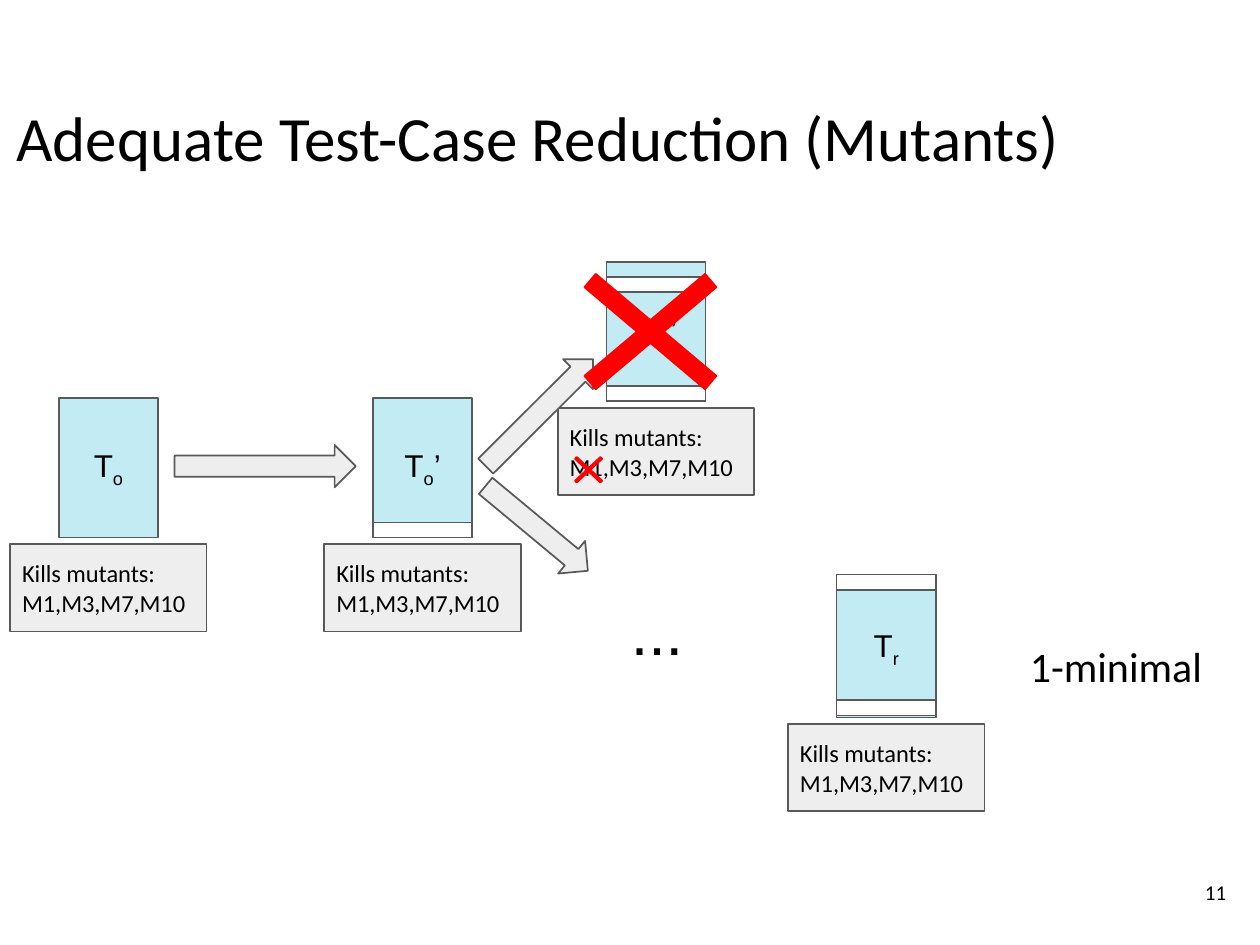
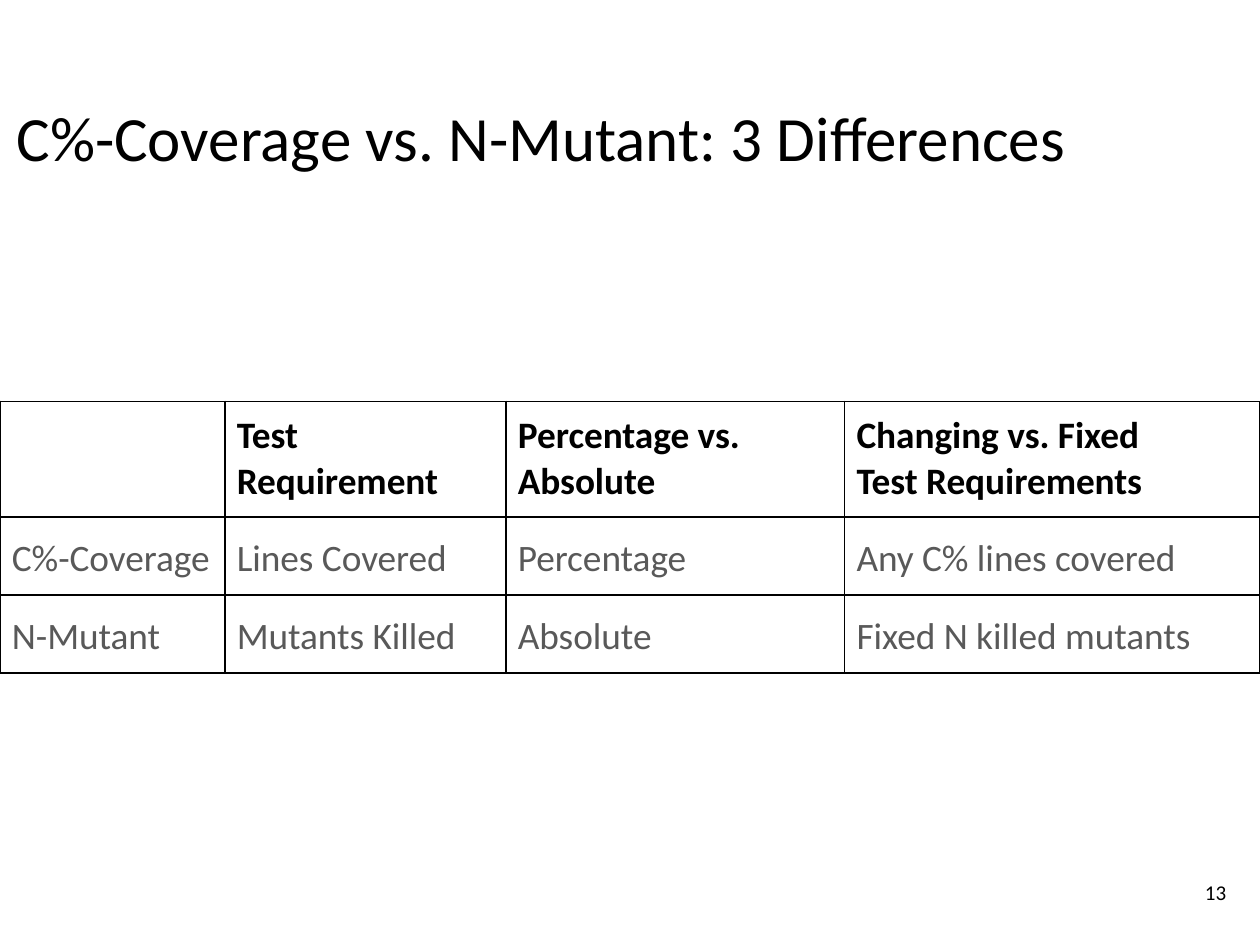
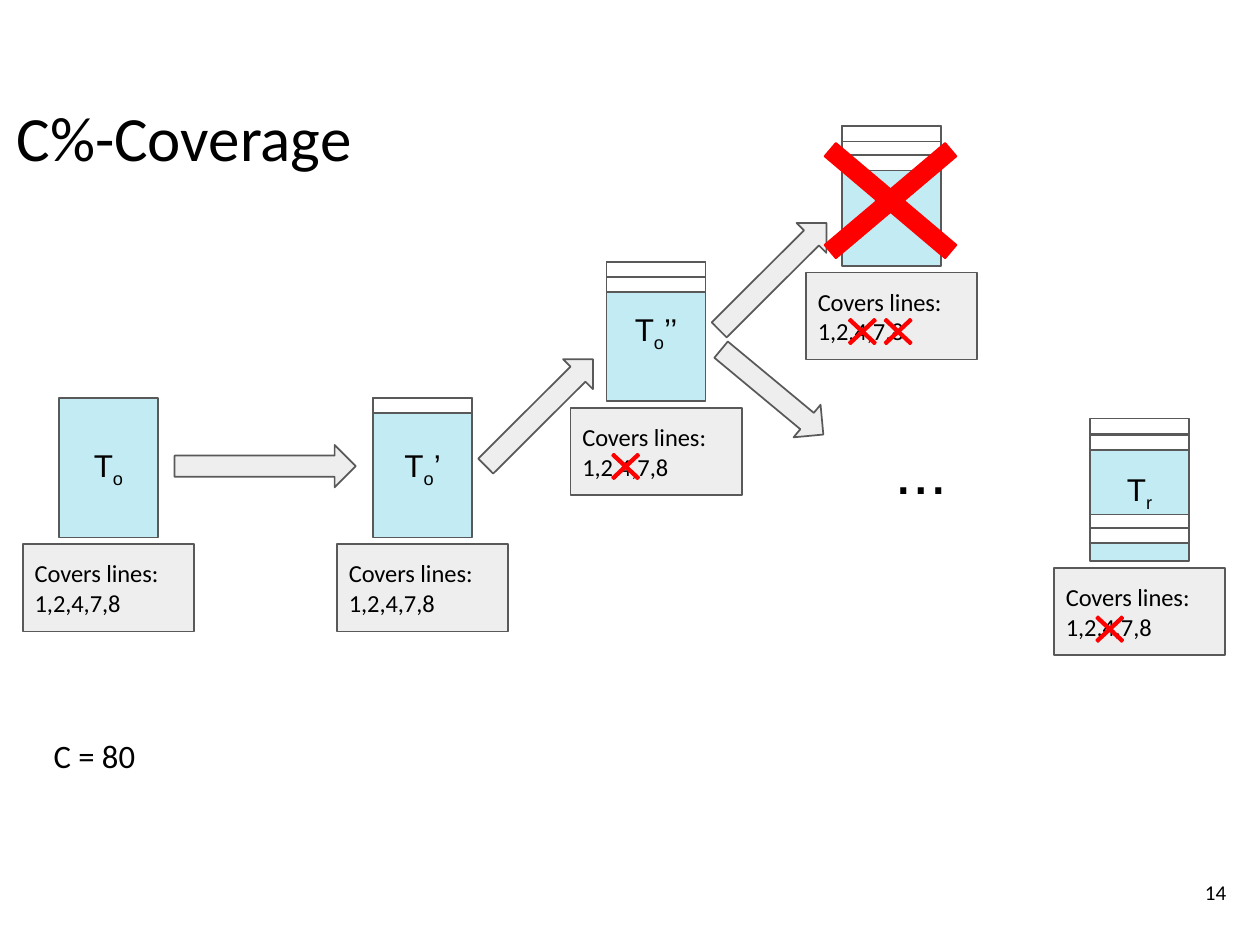
from lxml import etree
from pptx import Presentation
from pptx.dml.color import RGBColor
from pptx.enum import shapes, text
from pptx.oxml import ns
from pptx.util import Cm, Pt

BLACK, GREY, PALE = "000000", "595959", "EEEEEE"
BLUE, WHITE, RED = "C3EBF3", "FFFFFF", "FF0000"
KIND = shapes.MSO_SHAPE
LEFT, MID, RIGHT = text.PP_ALIGN.LEFT, text.PP_ALIGN.CENTER, text.PP_ALIGN.RIGHT


def draw(page, kind, x, y, w, h, fill, line=GREY):
    form = page.shapes.add_shape(kind, Cm(x), Cm(y), Cm(w), Cm(h))
    form.shadow.inherit = False
    form.fill.solid()
    form.fill.fore_color.rgb = RGBColor.from_string(fill)
    form.line.color.rgb = RGBColor.from_string(line)
    form.line.width = Pt(0.75)
    return form


def put(frame, lines, size, font="Calibri", align=LEFT, inset=0.18,
        anchor=text.MSO_ANCHOR.MIDDLE, color=BLACK, wrap=True):
    frame.word_wrap = wrap
    frame.vertical_anchor = anchor
    frame.margin_left = frame.margin_right = Cm(inset)
    frame.margin_top = frame.margin_bottom = Cm(inset)
    for row, parts in enumerate(lines):
        para = frame.add_paragraph() if row else frame.paragraphs[0]
        para.alignment = align
        for spot, part in enumerate(parts):
            run = para.add_run()
            run.text = part
            run.font.size = Pt(size)
            run.font.name = font
            run.font.color.rgb = RGBColor.from_string(color)
            if spot == 1:
                run.font._element.set("baseline", "-25000")


deck = Presentation()
deck.slide_width, deck.slide_height = Cm(19.05), Cm(14.29)
pages = []
for title, number in [
    ("Adequate Test-Case Reduction (Mutants)", "11"),
    ("C%-Coverage vs. N-Mutant: 3 Differences", "13"),
    ("C%-Coverage", "14"),
]:
    page = deck.slides.add_slide(deck.slide_layouts[6])
    head = page.shapes.add_textbox(Cm(0), Cm(1.24), Cm(19.05), Cm(1.6))
    put(head.text_frame, [(title,)], 27, inset=0.25, anchor=text.MSO_ANCHOR.TOP)
    foot = page.shapes.add_textbox(Cm(17.65), Cm(12.95), Cm(1.14), Cm(1.09))
    put(foot.text_frame, [(number,)], 9, align=RIGHT, inset=0.25)
    pages.append(page)

TEST_W, TEST_H, STRIP_H = 1.5, 2.11, 0.23
CARD_H, CARD_DROP = 1.32, 2.21

flows = [
    {
        "page": pages[0],
        "card": [("Kills mutants:",), ("M1,M3,M7,M10",)],
        "width": 2.97,
        "tests": [
            (0.89, 6.02, ("T", "o"), []),
            (5.64, 6.02, ("T", "o", "’"), [1.88]),
            (9.17, 3.96, ("T", "o", "’’"), [0.23, 1.88]),
            (12.65, 8.74, ("T", "r"), [-0.05, 1.85]),
        ],
        "arrows": [(2.64, 6.73, 2.74, 0), (7.01, 5.92, 2.29, 315.1),
                   (7.11, 7.67, 2.01, 39.7)],
        "small": [(8.53, 6.76)],
        "big": (8.08, 3.53),
        "dots": (8.18, 8.66),
        "note": ("1-minimal", 18, 15.32, 9.43, 3.15),
    },
    {
        "page": pages[2],
        "card": [("Covers lines:",), ("1,2,4,7,8",)],
        "width": 2.59,
        "tests": [
            (0.89, 6.02, ("T", "o"), []),
            (5.64, 6.02, ("T", "o", "’"), [0]),
            (9.17, 3.96, ("T", "o", "’’"), [0, 0.23]),
            (12.73, 1.91, ("T", "o", "’’’"), [0, 0.23, 0.44]),
            (16.48, 6.38, ("T", "r"), [-0.05, 0.2, 1.4, 1.6]),
        ],
        "arrows": [(2.64, 6.73, 2.74, 0), (7.01, 5.92, 2.29, 315.1),
                   (10.54, 3.86, 2.29, 315.1), (10.67, 5.61, 2.01, 39.7)],
        "small": [(9.09, 6.71), (12.67, 4.67), (13.21, 4.67), (16.41, 9.17)],
        "big": (11.71, 1.55),
        "dots": (12.17, 6.22),
        "note": ("C = 80", 14, 0.56, 10.88, 2.16),
    },
]

for flow in flows:
    page = flow["page"]
    for x, y, name, strips in flow["tests"]:
        test = draw(page, KIND.RECTANGLE, x, y, TEST_W, TEST_H, BLUE)
        put(test.text_frame, [name], 13.5, "Arial", MID)
        for drop in strips:
            draw(page, KIND.RECTANGLE, x, y + drop, TEST_W, STRIP_H, WHITE)
        edge = x + (TEST_W - flow["width"]) / 2
        card = draw(page, KIND.RECTANGLE, edge, y + CARD_DROP, flow["width"], CARD_H, PALE)
        put(card.text_frame, flow["card"], 10.5)
    for x, y, long, turn in flow["arrows"]:
        draw(page, KIND.RIGHT_ARROW, x, y, long, 0.64, PALE).rotation = turn
    for x, y in flow["small"]:
        cross = draw(page, KIND.MATH_MULTIPLY, x, y, 0.74, 0.69, RED, RED)
        cross.adjustments[0] = 0.056
    cross = draw(page, KIND.MATH_MULTIPLY, *flow["big"], 3.51, 2.97, RED, RED)
    cross.adjustments[0] = 0.089
    x, y = flow["dots"]
    dots = page.shapes.add_textbox(Cm(x), Cm(y), Cm(3.51), Cm(1.75))
    put(dots.text_frame, [("...",)], 27, "Arial", MID)
    words, size, x, y, wide = flow["note"]
    note = page.shapes.add_textbox(Cm(x), Cm(y), Cm(wide), Cm(1.1))
    put(note.text_frame, [(words,)], size, inset=0.25,
        anchor=text.MSO_ANCHOR.TOP, wrap=False)

rows = [
    ["", "Test Requirement", "Percentage vs. Absolute", "Changing vs. Fixed\nTest Requirements"],
    ["C%-Coverage", "Lines Covered", "Percentage", "Any C% lines covered"],
    ["N-Mutant", "Mutants Killed", "Absolute", "Fixed N killed mutants"],
]
wides, highs = [3.4, 4.25, 5.12, 6.28], [1.75, 1.18, 1.18]
grid = pages[1].shapes.add_table(
    3, 4, Cm(0), Cm(6.07), Cm(sum(wides)), Cm(sum(highs))).table
grid.first_row = grid.horz_banding = False
for col, wide in zip(grid.columns, wides):
    col.width = Cm(wide)
for row, high in zip(grid.rows, highs):
    row.height = Cm(high)
for r, row in enumerate(rows):
    for c, words in enumerate(row):
        cell = grid.cell(r, c)
        cell.fill.background()
        cell.margin_left = cell.margin_right = Cm(0.18)
        cell.margin_top = cell.margin_bottom = Cm(0.18)
        para = cell.text_frame.paragraphs[0]
        if r:
            para.line_spacing = 1.15
            para.space_after = Pt(16)
        for i, part in enumerate(words.split("\n") if words else []):
            if i:
                para.add_line_break()
            run = para.add_run()
            run.text = part
            run.font.size = Pt(16)
            run.font.name = "Calibri"
            run.font.bold = r == 0
            run.font.color.rgb = RGBColor.from_string(GREY if r else BLACK)
        props = cell._tc.get_or_add_tcPr()
        for i, side in enumerate(["lnL", "lnR", "lnT", "lnB"]):
            line = etree.Element(ns.qn("a:" + side), w=str(Pt(0.75)))
            fill = etree.SubElement(line, ns.qn("a:solidFill"))
            etree.SubElement(fill, ns.qn("a:srgbClr"), val=BLACK)
            props.insert(i, line)

deck.save("out.pptx")
